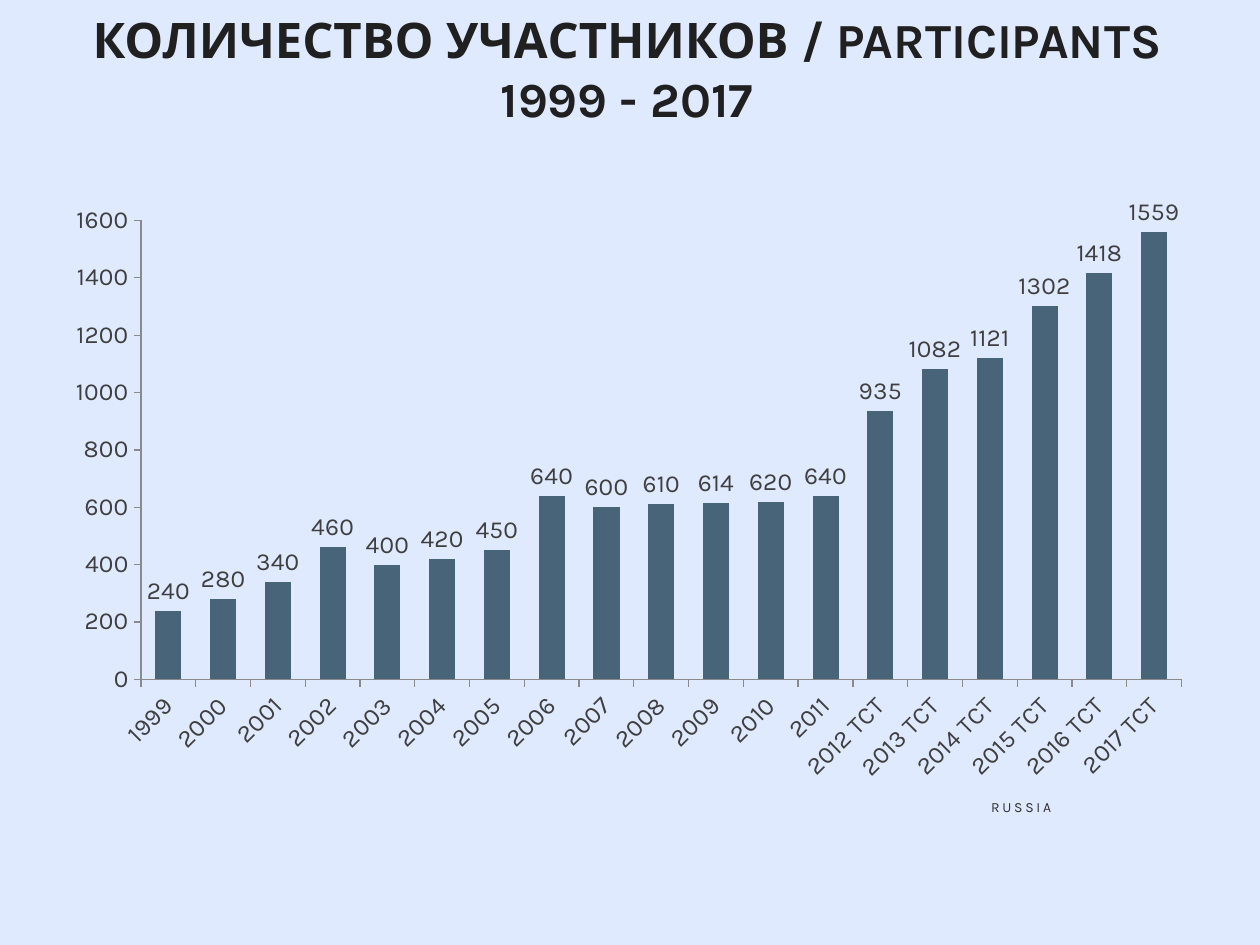
from pptx import Presentation
from pptx import util as u
from pptx.chart.data import CategoryChartData
from pptx.dml.color import RGBColor
from pptx.enum import chart as charts, text

COLORS = {
    "background": "E0EAFF",
    "title": "202020",
    "chart_text": "3F3F3F",
    "caption": "2F2F2F",
    "bar": "486478",
    "axis": "8A8A8A",
}
FONT = "Karla"
YEARS = [str(year) for year in range(1999, 2012)]
YEARS += [f"{year} TCT" for year in range(2012, 2018)]
PARTICIPANTS = [240, 280, 340, 460, 400, 420, 450, 640, 600, 610,
                614, 620, 640, 935, 1082, 1121, 1302, 1418, 1559]


def rgb(name):
    return RGBColor.from_string(COLORS[name])


def style_font(font, size, color, bold=False):
    font.name = FONT
    font.size = u.Pt(size)
    font.bold = bold
    font.color.rgb = rgb(color)


def add_text(slide, box, words, size, color, anchor, bold=False):
    """Add centred text without margins and return its paragraph."""
    frame = slide.shapes.add_textbox(*map(u.Inches, box)).text_frame
    frame.word_wrap = True
    frame.vertical_anchor = anchor
    frame.margin_left = frame.margin_right = 0
    frame.margin_top = frame.margin_bottom = 0
    paragraph = frame.paragraphs[0]
    paragraph.text = words
    paragraph.alignment = text.PP_ALIGN.CENTER
    style_font(paragraph.font, size, color, bold)
    return paragraph


def add_title(slide, box):
    add_text(slide, box, "КОЛИЧЕСТВО УЧАСТНИКОВ / PARTICIPANTS\v1999 - 2017",
             28, "title", text.MSO_ANCHOR.MIDDLE, bold=True)


def add_caption(slide, box):
    paragraph = add_text(slide, box, "RUSSIA", 8, "caption",
                         text.MSO_ANCHOR.BOTTOM)
    paragraph.runs[0].font._element.set("spc", "150")


def style_axis(axis):
    axis.has_major_gridlines = False
    axis.major_tick_mark = charts.XL_TICK_MARK.OUTSIDE
    axis.minor_tick_mark = charts.XL_TICK_MARK.NONE
    axis.format.line.color.rgb = rgb("axis")
    axis.format.line.width = u.Pt(0.75)
    style_font(axis.tick_labels.font, 14, "chart_text")


def add_participants_chart(slide, box):
    data = CategoryChartData()
    data.categories = YEARS
    data.add_series("Series 1", PARTICIPANTS)
    chart = slide.shapes.add_chart(charts.XL_CHART_TYPE.COLUMN_CLUSTERED,
                                   *map(u.Inches, box), data).chart
    chart.has_legend = False
    chart.has_title = False
    style_font(chart.font, 18, "chart_text")

    for axis in (chart.category_axis, chart.value_axis):
        style_axis(axis)
    label_body = chart.category_axis._element.xpath("c:txPr/a:bodyPr")[0]
    label_body.set("rot", str(-45 * 60000))
    chart.value_axis.minimum_scale = 0
    chart.value_axis.maximum_scale = 1600
    chart.value_axis.major_unit = 200

    plot = chart.plots[0]
    plot.gap_width = 110
    plot.vary_by_categories = False
    fill = plot.series[0].format.fill
    fill.solid()
    fill.fore_color.rgb = rgb("bar")
    plot.has_data_labels = True
    labels = plot.data_labels
    labels.show_value = True
    labels.position = charts.XL_LABEL_POSITION.OUTSIDE_END
    style_font(labels.font, 14, "chart_text")


def main():
    presentation = Presentation()
    presentation.slide_width = u.Inches(10)
    presentation.slide_height = u.Inches(7.5)
    slide = presentation.slides.add_slide(presentation.slide_layouts[6])
    slide.background.fill.solid()
    slide.background.fill.fore_color.rgb = rgb("background")
    add_title(slide, (0, 0.04, 9.95, 1))
    add_participants_chart(slide, (0.42, 1.54, 9.14, 4.76))
    add_caption(slide, (7.62, 6.14, 0.97, 0.33))
    presentation.save("out.pptx")


if __name__ == "__main__":
    main()
